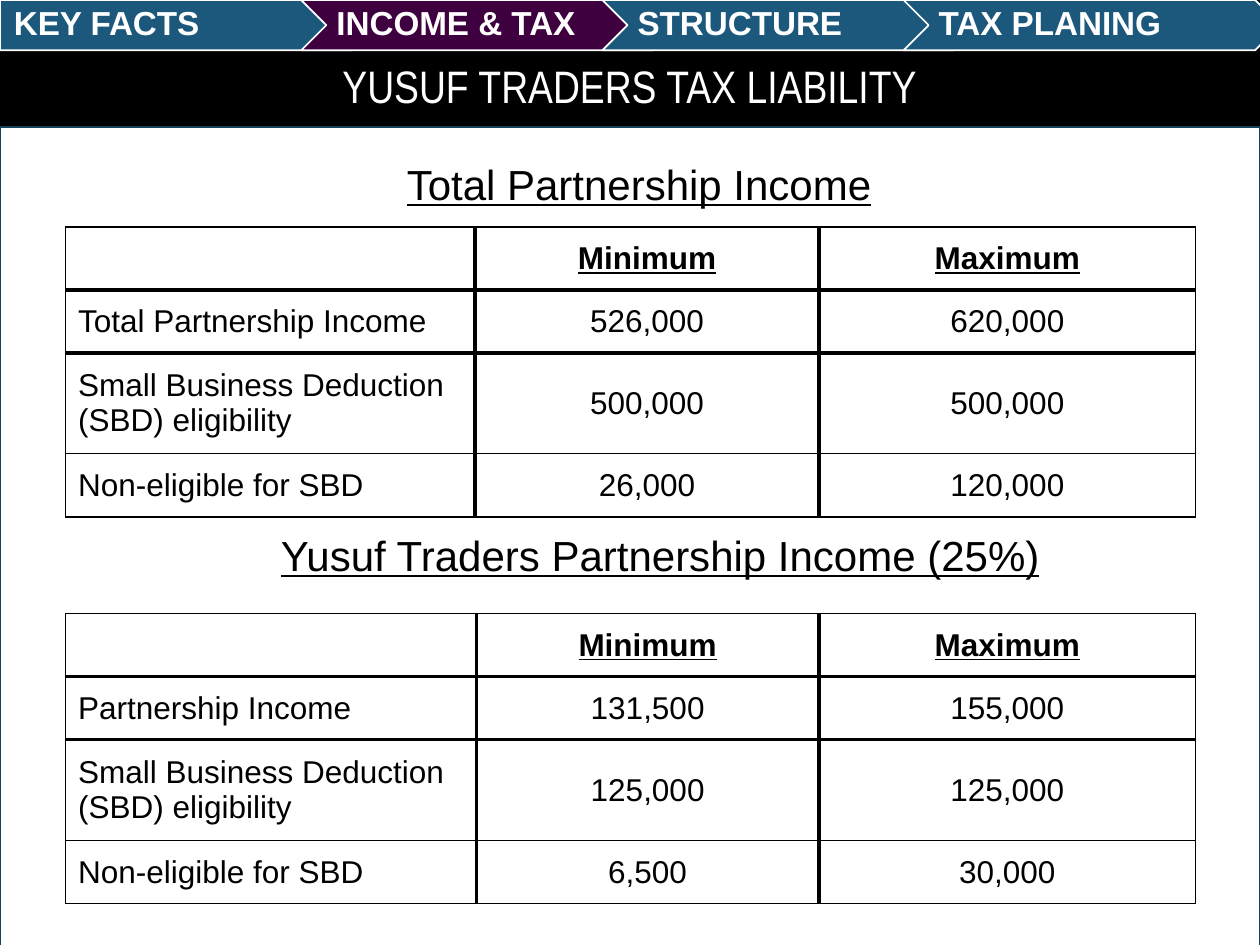
from pptx import Presentation
from pptx.dml.color import RGBColor
from pptx.enum.shapes import MSO_SHAPE
from pptx.enum.text import MSO_ANCHOR, PP_ALIGN
from pptx.oxml import parse_xml
from pptx.oxml.ns import nsdecls
from pptx.util import Inches, Pt

BLACK = RGBColor(0x00, 0x00, 0x00)
WHITE = RGBColor(0xFF, 0xFF, 0xFF)
BLUE = RGBColor(0x1B, 0x58, 0x7C)
PURPLE = RGBColor(0x3F, 0x00, 0x40)
FRAME_BLUE = RGBColor(0x14, 0x41, 0x5C)

TITLE = {"name": "Arial Narrow", "size": Pt(26)}
STEP = {"name": "Arial", "size": Pt(19), "bold": True}
HEADING = {"name": "Arial", "size": Pt(24), "underline": True}
BODY = {"name": "Arial", "size": Pt(18), "bold": False}
COLUMN_HEAD = {"name": "Arial", "size": Pt(18), "bold": True, "underline": True}

STEPS = ["KEY FACTS", "INCOME & TAX", "STRUCTURE", "TAX PLANING"]
CURRENT_STEP = 1
STEP_PITCH = 2.39
HEADER = ["", "Minimum", "Maximum"]
DEDUCTION = "Small Business Deduction (SBD) eligibility"
TOTAL_ROWS = [
    HEADER,
    ["Total Partnership Income", "526,000", "620,000"],
    [DEDUCTION, "500,000", "500,000"],
    ["Non-eligible for SBD", "26,000", "120,000"],
]
SHARE_ROWS = [
    HEADER,
    ["Partnership Income", "131,500", "155,000"],
    [DEDUCTION, "125,000", "125,000"],
    ["Non-eligible for SBD", "6,500", "30,000"],
]
THIN, THICK = 1, 2.25


def write(para, text, style, color):
    """Add one formatted span to a paragraph."""
    span = para.add_run()
    span.text = text
    span.font.color.rgb = color
    for name, value in style.items():
        setattr(span.font, name, value)


def add_block(shapes, kind, place, fill, line):
    """Add a filled preset shape with a one-point outline."""
    shape = shapes.add_shape(kind, *map(Inches, place))
    shape.shadow.inherit = False
    shape.fill.solid()
    shape.fill.fore_color.rgb = fill
    shape.line.color.rgb = line
    shape.line.width = Pt(1)


def add_text(shapes, place, text, style, color, insets, anchor=MSO_ANCHOR.MIDDLE):
    """Add a wrapped text box and return its paragraph."""
    frame = shapes.add_textbox(*map(Inches, place)).text_frame
    frame.word_wrap = True
    frame.vertical_anchor = anchor
    for side, inset in zip(("left", "top", "right", "bottom"), insets):
        setattr(frame, f"margin_{side}", Inches(inset))
    para = frame.paragraphs[0]
    write(para, text, style, color)
    return para


def add_steps(page):
    """Add the row of navigation arrows."""
    group = page.shapes.add_group_shape().shapes
    for index, label in enumerate(STEPS):
        left = index * STEP_PITCH
        kind = MSO_SHAPE.CHEVRON if index else MSO_SHAPE.PENTAGON
        fill = PURPLE if index == CURRENT_STEP else BLUE
        add_block(group, kind, (left, 0, 2.99, 0.4), fill, WHITE)
        place = (left + 0.2, 0, 2.59, 0.4) if index else (0, 0, 2.89, 0.4)
        insets = (0.08 if index else 0.11, 0.06, 0.03, 0.06)
        para = add_text(group, place, label, STEP, WHITE, insets)
        para.line_spacing = 0.9


def add_heading(page, top, text, margin, indent):
    """Add an underlined table heading with a left indent."""
    para = add_text(page.shapes, (1.13, top, 7.75, 0.61), text, HEADING, BLACK,
                    (0.1,) * 4, MSO_ANCHOR.TOP)
    properties = para._p.get_or_add_pPr()
    properties.set("marL", str(Inches(margin)))
    properties.set("indent", str(Inches(indent)))


def set_borders(cell, widths):
    """Draw black cell edges in the order left, right, top, bottom."""
    properties = cell._tc.get_or_add_tcPr()
    for side, width in zip("LRTB", widths):
        properties.append(parse_xml(
            f'<a:ln{side} {nsdecls("a")} w="{Pt(width)}"><a:solidFill>'
            f'<a:srgbClr val="{BLACK}"/></a:solidFill></a:ln{side}>'))


def add_income_table(page, top, rows, widths):
    """Add a ruled income table with centred value columns."""
    table = page.shapes.add_table(len(rows), len(widths), Inches(0.52), Inches(top),
                                  Inches(sum(widths)), Inches(1.68)).table
    table.first_row = table.horz_banding = False
    for column, width in zip(table.columns, widths):
        column.width = Inches(width)
    vertical = [THIN, THICK, THICK, THIN]
    horizontal = [THIN, THICK, THICK, THIN, THIN]
    for r, values in enumerate(rows):
        table.rows[r].height = Inches(0.42)
        for c, value in enumerate(values):
            cell = table.cell(r, c)
            set_borders(cell, vertical[c:c + 2] + horizontal[r:r + 2])
            cell.fill.background()
            cell.vertical_anchor = MSO_ANCHOR.MIDDLE
            for side in ("left", "top", "right", "bottom"):
                setattr(cell, f"margin_{side}", Inches(0.1))
            para = cell.text_frame.paragraphs[0]
            para.alignment = PP_ALIGN.CENTER if c else PP_ALIGN.LEFT
            if value:
                write(para, value, BODY if r else COLUMN_HEAD, BLACK)


def main():
    """Build the tax liability slide."""
    deck = Presentation()
    deck.slide_width, deck.slide_height = Inches(10), Inches(7.5)
    page = deck.slides.add_slide(deck.slide_layouts[6])
    add_block(page.shapes, MSO_SHAPE.RECTANGLE, (0, 0, 10, 7.5), BLACK, BLACK)
    add_block(page.shapes, MSO_SHAPE.RECTANGLE, (0, 1.01, 10, 6.5), WHITE, FRAME_BLUE)
    title = add_text(page.shapes, (0.69, 0.4, 8.62, 0.61), "YUSUF TRADERS TAX LIABILITY",
                     TITLE, WHITE, (0.1, 0.05, 0.1, 0.05))
    title.alignment = PP_ALIGN.CENTER
    title.line_spacing = 0.9
    add_steps(page)
    add_heading(page, 1.16, "Total Partnership Income", 1.5, 0.5)
    add_income_table(page, 1.8, TOTAL_ROWS, (3.25, 2.73, 2.99))
    add_heading(page, 4.1, "Yusuf Traders Partnership Income (25%)", 1, 0)
    add_income_table(page, 4.87, SHARE_ROWS, (3.26, 2.72, 2.99))
    deck.save("out.pptx")


if __name__ == "__main__":
    main()
